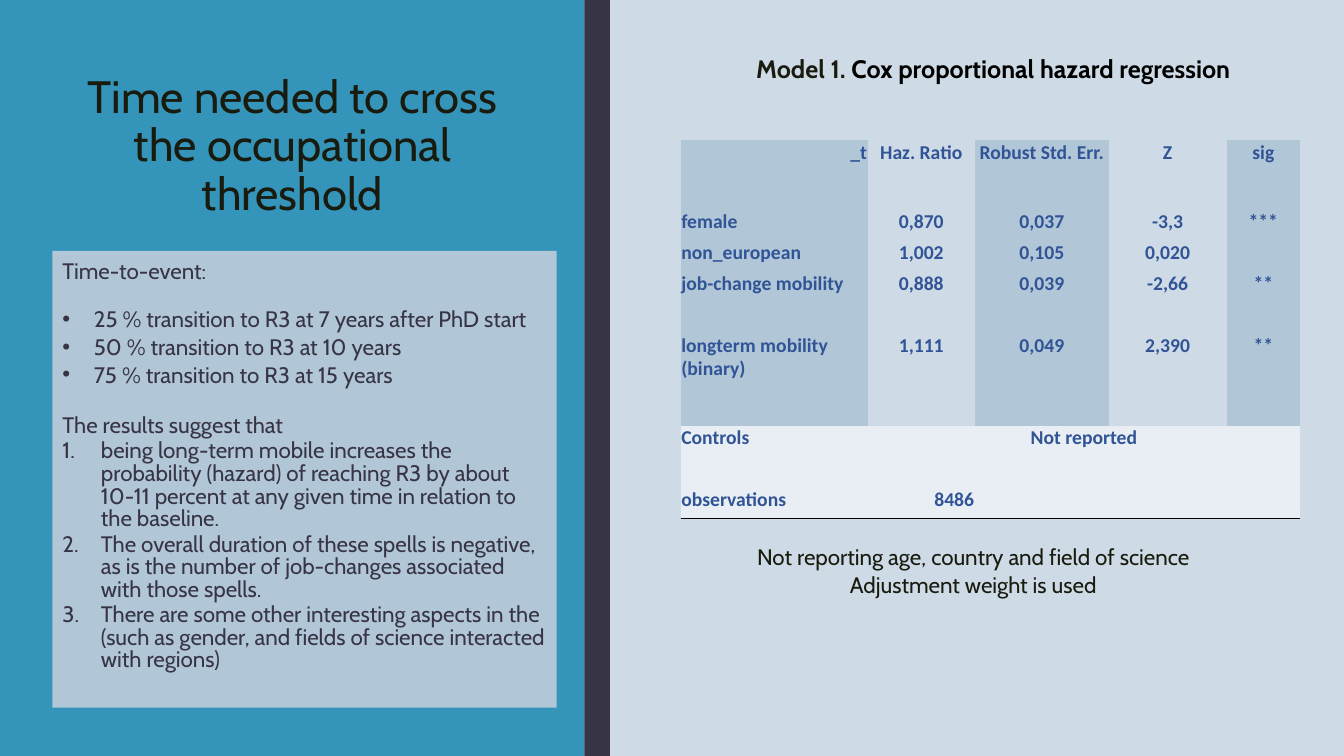
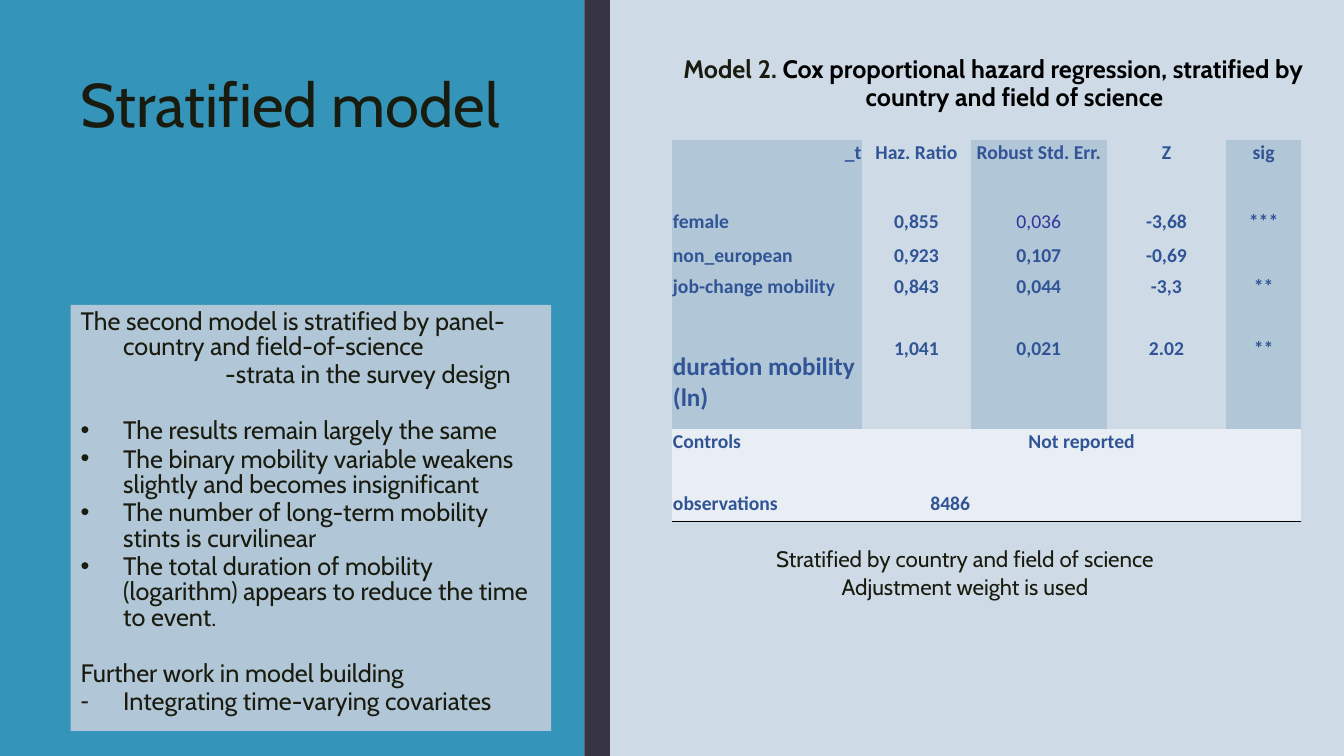
from lxml import etree
from pptx import Presentation
from pptx.dml.color import RGBColor
from pptx.enum.shapes import MSO_SHAPE
from pptx.enum.text import MSO_ANCHOR, MSO_AUTO_SIZE, PP_ALIGN
from pptx.oxml.ns import qn
from pptx.util import Cm, Pt

LEFT, CENTER, RIGHT = PP_ALIGN.LEFT, PP_ALIGN.CENTER, PP_ALIGN.RIGHT
TOP, MIDDLE = MSO_ANCHOR.TOP, MSO_ANCHOR.MIDDLE
FIXED = MSO_AUTO_SIZE.NONE
RECTANGLE = MSO_SHAPE.RECTANGLE

BLUE, DARK, INK, BLACK = "3494BA", "373545", "191B0E", "000000"
PALE, PANEL, LIGHT = "CEDBE6", "B1C6D7", "E8EEF3"
FIGURE, VIOLET = "305496", "333399"
PLAIN_TABLE = "{2D5ABB26-0587-4C30-8999-92F81FD0307C}"

COLUMN_SHARES = (0.302, 0.173, 0.216, 0.19, 0.119)
HEADER = ("_t", "Haz. Ratio", "Robust Std. Err.", "Z", "sig")
FOOTER_ROWS = [("Controls", "Not reported", "", "", ""),
               ("observations", "8486", "", "", "")]
FIRST_FOOTER_ROW = 5

HANGING = dict(margin=1.07, indent=-1.07)
EVENT = dict(size=16, color=DARK, spacing=1.03)
EVENT_BULLET = dict(EVENT, margin=0.79, indent=-0.79, bullet="•")
RESULT = dict(size=16, color=DARK, spacing=0.84, after=2)
RESULT_NUMBER = dict(RESULT, margin=0.97, indent=-0.97, bullet="1.")
NOTE = dict(size=18, spacing=0.84, after=2, **HANGING)
NOTE_BULLET = dict(NOTE, bullet="•")

CONTENTS = [
    dict(
        title="Time needed to cross the occupational threshold",
        title_format=dict(size=32.4, align=CENTER),
        body_box=(1.32, 6.32, 12.71, 11.51),
        body=[
            ("Time-to-event:", dict(EVENT, after=15)),
            ("25 % transition to R3 at 7 years after PhD start", EVENT_BULLET),
            ("50 % transition to R3 at 10 years", EVENT_BULLET),
            ("75 % transition to R3 at 15 years", dict(EVENT_BULLET, after=20)),
            ("The results suggest that", RESULT),
            ("being long-term mobile increases the probability (hazard) of "
             "reaching R3 by about 10-11 percent at any given time in relation "
             "to the baseline.", RESULT_NUMBER),
            ("The overall duration of these spells is negative, as is the number "
             "of job-changes associated with those spells.", RESULT_NUMBER),
            ("There are some other interesting aspects in the (such as gender, "
             "and fields of science interacted with regions)", RESULT_NUMBER),
        ],
        model="Model 1. ",
        heading="Cox proportional hazard regression",
        heading_height=1,
        table_left=17.15,
        table_width=15.62,
        row_heights=(1.73, 0.78, 0.78, 1.56, 2.34, 1.56, 0.78),
        rows=[
            ("female", "0,870", "0,037", "-3,3", "***"),
            ("non_european", "1,002", "0,105", "0,020", ""),
            ("job-change mobility", "0,888", "0,039", "-2,66", "**"),
            ("longterm mobility (binary)", "1,111", "0,049", "2,390", "**"),
        ],
        special_cells={},
        caption_top=13.61,
        caption=("Not reporting age, country and field of science",
                 "Adjustment weight is used"),
    ),
    dict(
        title="Stratified model",
        title_format=dict(size=44, align=LEFT),
        body_box=(1.78, 7.68, 12.11, 10.74),
        body=[
            ("The second model is stratified by panel-country and "
             "field-of-science", NOTE),
            ("-strata in the survey design",
             dict(NOTE, margin=3.64, indent=0, after=22)),
            ("The results remain largely the same", NOTE_BULLET),
            ("The binary mobility variable weakens slightly and becomes "
             "insignificant", NOTE_BULLET),
            ("The number of long-term mobility stints is curvilinear",
             NOTE_BULLET),
            ("The total duration of mobility (logarithm) appears to reduce the "
             "time to event.", dict(NOTE_BULLET, after=22)),
            ("Further work in model building", NOTE),
            ("Integrating time-varying covariates", dict(NOTE, bullet="-")),
        ],
        model="Model 2. ",
        heading="Cox proportional hazard regression, stratified by country and "
                "field of science",
        heading_height=1.7,
        table_left=16.94,
        table_width=15.85,
        row_heights=(1.73, 0.86, 0.78, 1.56, 2.34, 1.56, 0.78),
        rows=[
            ("female", "0,855", "0,036", "-3,68", "***"),
            ("non_european", "0,923", "0,107", "-0,69", ""),
            ("job-change mobility", "0,843", "0,044", "-3,3", "**"),
            ("duration mobility (ln)", "1,041", "0,021", "2.02", "**"),
        ],
        special_cells={(1, 2): dict(color=VIOLET, bold=False),
                       (4, 0): dict(size=18)},
        caption_top=13.67,
        caption=("Stratified by country and field of science",
                 "Adjustment weight is used"),
    ),
]


def paint(fill, color):
    fill.solid()
    fill.fore_color.rgb = RGBColor.from_string(color)


def write(frame, text, size=16, color=INK, font="Cabin", bold=False, align=LEFT,
          spacing=1.0, after=0, margin=0, indent=0, bullet=None):
    """Add one paragraph; text is a string or a list of (string, colour) spans."""
    para = frame.add_paragraph() if frame.text else frame.paragraphs[0]
    para.alignment = align
    para.line_spacing = spacing
    para.space_before = Pt(0)
    para.space_after = Pt(after)
    properties = para._p.get_or_add_pPr()
    properties.set("marL", str(Cm(margin)))
    properties.set("indent", str(Cm(indent)))
    if bullet is None:
        etree.SubElement(properties, qn("a:buNone"))
    elif bullet == "1.":
        etree.SubElement(properties, qn("a:buAutoNum"), type="arabicPeriod")
    else:
        etree.SubElement(properties, qn("a:buChar"), char=bullet)
    for words, span_color in [(text, color)] if isinstance(text, str) else text:
        span = para.add_run()
        span.text = words
        span.font.name = font
        span.font.size = Pt(size)
        span.font.bold = bold
        paint(span.font.fill, span_color)


deck = Presentation()
deck.slide_width, deck.slide_height = Cm(33.87), Cm(19.05)
paint(deck.slide_master.background.fill, PALE)
layout = deck.slide_layouts[1]
slides = [deck.slides.add_slide(layout) for _ in CONTENTS]

# Bands and title position belong to the layout, so both slides inherit them
for number, (left, width, color) in enumerate([(0, 14.73, BLUE),
                                               (14.73, 0.64, DARK)]):
    band = slides[0].shapes.add_shape(RECTANGLE, Cm(left), 0, Cm(width),
                                      deck.slide_height)
    band.shadow.inherit = False
    paint(band.fill, color)
    band.line.fill.background()
    band.element.xpath("./p:nvSpPr/p:cNvPr")[0].set("id", str(20 + number))
    layout.shapes.element.insert(2 + number, band.element)

layout_title = layout.placeholders[0]
layout_title.left, layout_title.top = Cm(1.78), Cm(1.75)
layout_title.width, layout_title.height = Cm(11.18), Cm(5.66)

for slide, content in zip(slides, CONTENTS):
    title = slide.shapes.title.text_frame
    title.vertical_anchor = TOP
    title.auto_size = FIXED
    write(title, content["title"], spacing=0.89, **content["title_format"])

    body = slide.placeholders[1]
    body.left, body.top, body.width, body.height = map(Cm, content["body_box"])
    paint(body.fill, PANEL)
    body.text_frame.vertical_anchor = TOP
    body.text_frame.auto_size = FIXED
    for text, text_format in content["body"]:
        write(body.text_frame, text, **text_format)

    heading = slide.shapes.add_textbox(Cm(16.56), Cm(1.27), Cm(16.94),
                                       Cm(content["heading_height"])).text_frame
    heading.word_wrap = True
    write(heading, [(content["model"], INK), (content["heading"], BLACK)],
          size=18, bold=True, align=CENTER, spacing=0.94, after=2, **HANGING)

    rows = [HEADER] + content["rows"] + FOOTER_ROWS
    table_frame = slide.shapes.add_table(
        len(rows), len(HEADER), Cm(content["table_left"]), Cm(3.53),
        Cm(content["table_width"]), Cm(sum(content["row_heights"])))
    table_frame.element.xpath(".//a:tableStyleId")[0].text = PLAIN_TABLE
    table = table_frame.table
    table.first_row = table.horz_banding = False
    for column, share in zip(table.columns, COLUMN_SHARES):
        column.width = Cm(content["table_width"] * share)
    for row, height in zip(table.rows, content["row_heights"]):
        row.height = Cm(height)

    for r, values in enumerate(rows):
        for c, value in enumerate(values):
            cell = table.cell(r, c)
            cell.margin_left = cell.margin_right = cell.margin_top = Cm(0.02)
            cell.margin_bottom = 0
            if r >= FIRST_FOOTER_ROW:
                paint(cell.fill, LIGHT)
            elif c % 2 == 0:
                paint(cell.fill, PANEL)
            else:
                cell.fill.background()
            if value in ("_t", "8486"):
                align = RIGHT
            else:
                align = CENTER if c else LEFT
            cell_format = dict(size=14, color=FIGURE, font="Calibri", bold=True,
                               align=align)
            cell_format.update(content["special_cells"].get((r, c), {}))
            cell.vertical_anchor = MIDDLE if cell_format["size"] > 14 else TOP
            write(cell.text_frame, value, **cell_format)
    table.cell(FIRST_FOOTER_ROW, 1).merge(table.cell(FIRST_FOOTER_ROW, 4))

    for cell_properties in table_frame.element.xpath(".//a:tr[last()]//a:tcPr"):
        border = etree.Element(qn("a:lnB"), w=str(Pt(1)))
        border_fill = etree.SubElement(border, qn("a:solidFill"))
        etree.SubElement(border_fill, qn("a:srgbClr"), val=BLACK)
        cell_properties.insert(0, border)

    caption = slide.shapes.add_textbox(
        Cm(content["table_left"] - 1.09), Cm(content["caption_top"]),
        Cm(16.94), Cm(1.63)).text_frame
    caption.word_wrap = True
    for line in content["caption"]:
        write(caption, line, align=CENTER, spacing=0.94, after=2, **HANGING)

deck.save("out.pptx")
